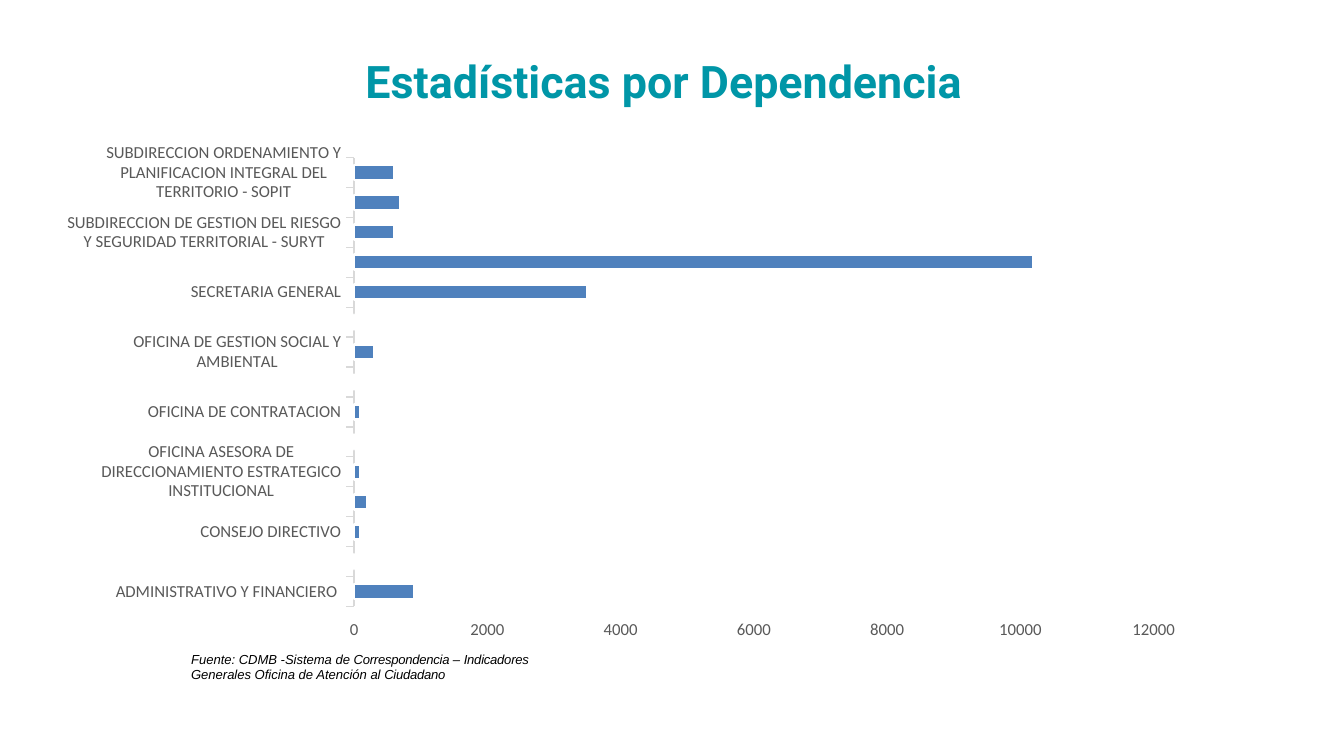
"""Build the slide with the bar chart of figures by department."""
from lxml import etree
from pptx import Presentation
from pptx.chart.data import CategoryChartData
from pptx.dml.color import RGBColor
from pptx.enum.chart import XL_CHART_TYPE, XL_TICK_MARK
from pptx.oxml.ns import qn
from pptx.util import Pt

BAR = XL_CHART_TYPE.BAR_CLUSTERED
OUT = XL_TICK_MARK.OUTSIDE
TEAL = RGBColor(0x00, 0x96, 0xA7)
BLUE = RGBColor(0x4F, 0x81, 0xBD)
GREY = RGBColor(0x59, 0x59, 0x59)
PALE = RGBColor(0xD9, 0xD9, 0xD9)
WHITE = RGBColor(0xFF, 0xFF, 0xFF)
BLACK = RGBColor(0x00, 0x00, 0x00)

TITLE = [("Estadísticas por Dependencia", 0)]
SOURCE = [
    ("Fuente: CDMB ", 0),
    ("-", -20),
    ("Sistema de ", 0),
    ("Correspondencia ", -10),
    ("– ", 0),
    ("Indicadores ", -10),
    ("Generales Oficina de Atención al ", 0),
    ("Ciudadano", -10),
]
DATA = [
    ("ADMINISTRATIVO Y FINANCIERO ", 900),
    ("ASAMBLEA GENERAL", 0),
    ("CONSEJO DIRECTIVO", 100),
    ("DIRECCION GENERAL", 200),
    ("OFICINA ASESORA DE DIRECCIONAMIENTO ESTRATEGICO INSTITUCIONAL", 100),
    ("OFICINA CONTROL INTERNO", 0),
    ("OFICINA DE CONTRATACION", 100),
    ("OFICINA DE CONTROL DISCIPLINARIO INTERNO", 0),
    ("OFICINA DE GESTION SOCIAL Y AMBIENTAL", 300),
    ("REVISORA FISCAL", 0),
    ("SECRETARIA GENERAL", 3500),
    ("SUBDIRECCION DE EVALUACION Y CONTROL AMBIENTAL", 10200),
    ("SUBDIRECCION DE GESTION DEL RIESGO Y SEGURIDAD TERRITORIAL - SURYT", 600),
    ("SUBDIRECCION DE GESTION INTEGRAL DE LA OFERTA AMBIENTAL- SUGOA", 700),
    ("SUBDIRECCION ORDENAMIENTO Y PLANIFICACION INTEGRAL DEL TERRITORIO - SOPIT", 600),
]
PLOT = {"layoutTarget": "inner", "xMode": "edge", "yMode": "edge",
        "x": 0.25, "y": 0.05, "w": 0.71, "h": 0.87}


def style(font, name, size, color):
    font.name, font.size = name, Pt(size)
    font.color.rgb = color


def add_text(slide, box, runs, face, bold=False, italic=False, left=0, top=0):
    frame = slide.shapes.add_textbox(*map(Pt, box)).text_frame
    frame.word_wrap = True
    frame.margin_left, frame.margin_top = Pt(left), Pt(top)
    frame.margin_right = frame.margin_bottom = 0
    for text, gap in runs:
        run = frame.paragraphs[0].add_run()
        run.text = text
        style(run.font, *face)
        run.font.bold, run.font.italic = bold, italic
        if gap:
            run.font._element.set("spc", str(gap))


def place_plot(chart):
    area = chart.element.find(".//" + qn("c:plotArea"))
    for old in area.findall(qn("c:layout")):
        area.remove(old)
    layout = etree.Element(qn("c:layout"))
    manual = etree.SubElement(layout, qn("c:manualLayout"))
    for tag, val in PLOT.items():
        etree.SubElement(manual, qn("c:" + tag)).set("val", str(val))
    area.insert(0, layout)


def add_bars(slide, box):
    data = CategoryChartData()
    data.categories = [name for name, _ in DATA]
    data.add_series("Series 1", [val for _, val in DATA])
    chart = slide.shapes.add_chart(BAR, *map(Pt, box), data).chart
    chart.has_legend = chart.has_title = False
    style(chart.font, "Calibri", 10, BLACK)
    plot = chart.plots[0]
    plot.gap_width = 100
    plot.vary_by_categories = False
    bars = plot.series[0].format
    bars.fill.solid()
    bars.fill.fore_color.rgb = BLUE
    bars.line.color.rgb = WHITE
    bars.line.width = Pt(1.5)
    for axis in (chart.category_axis, chart.value_axis):
        axis.has_major_gridlines = False
        axis.major_tick_mark = OUT
        style(axis.tick_labels.font, "Calibri", 9, GREY)
    line = chart.category_axis.format.line
    line.color.rgb = PALE
    line.width = Pt(0.75)
    scale = chart.value_axis
    scale.format.line.fill.background()
    scale.minimum_scale, scale.maximum_scale = 0, 12000
    scale.major_unit = 2000
    place_plot(chart)


def main():
    deck = Presentation()
    deck.slide_width, deck.slide_height = Pt(720), Pt(405)
    slide = deck.slides.add_slide(deck.slide_layouts[6])
    add_text(slide, (101.5, 347, 186.5, 18.7), SOURCE, ("Arial", 7, BLACK),
             italic=True, left=0.9, top=1.8)
    add_text(slide, (195.8, 28.8, 387.4, 28.8), TITLE, ("Roboto", 24, TEAL), bold=True)
    add_bars(slide, (36, 70.6, 606.2, 276.5))
    deck.save("out.pptx")


if __name__ == "__main__":
    main()
